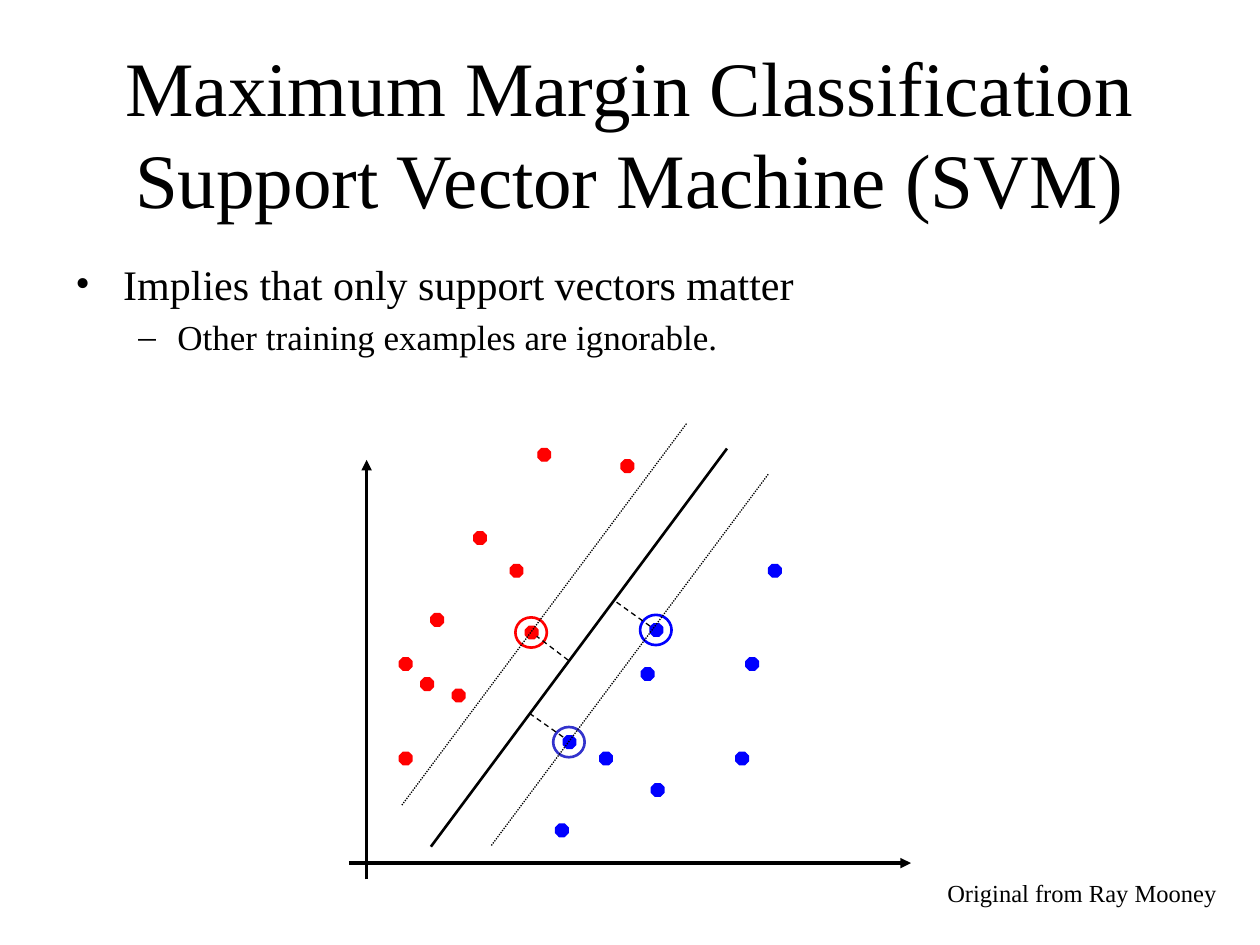
import pptx
import pptx.dml.color
import pptx.enum.dml
import pptx.enum.shapes
import pptx.enum.text
import pptx.oxml.ns
import pptx.util
from lxml import etree
from pptx.util import Inches, Pt

BLACK = pptx.dml.color.RGBColor(0x00, 0x00, 0x00)
RED = pptx.dml.color.RGBColor(0xFF, 0x00, 0x00)
BLUE = pptx.dml.color.RGBColor(0x00, 0x00, 0xFF)
INDIGO = pptx.dml.color.RGBColor(0x33, 0x33, 0xCC)
FONT = "Times New Roman"
DASH = pptx.enum.dml.MSO_LINE.DASH
DOTS = pptx.enum.dml.MSO_LINE.ROUND_DOT
SHAPES = pptx.enum.shapes.MSO_SHAPE
qn = pptx.oxml.ns.qn

POINT_SIZE = 0.1
RING_WIDTH, RING_HEIGHT = 0.25, 0.24

RED_POINTS = [
    (4.05, 4.48), (3.42, 4.87), (3.59, 5.47), (3.17, 5.97), (3.76, 4.22),
    (3.17, 5.22), (3.34, 5.38), (4.17, 4.97), (4.27, 3.56), (4.93, 3.65),
]
BLUE_POINTS = [
    (5.16, 4.95), (4.76, 5.97), (5.84, 5.97), (4.41, 6.54), (5.09, 5.3),
    (4.47, 5.84), (5.17, 6.22), (5.92, 5.22), (6.1, 4.48),
]
SUPPORT_RINGS = [(4.09, 4.9, RED), (4.39, 5.77, INDIGO), (5.08, 4.88, BLUE)]
AXES = [((2.91, 6.98), (2.91, 3.65)), ((2.77, 6.85), (7.23, 6.85))]
SEPARATOR = ((3.42, 6.72), (5.77, 3.56))
MARGIN_DISTANCES = [
    ((5.16, 4.97), (4.88, 4.77)),
    ((4.47, 5.85), (4.2, 5.66)),
    ((4.51, 5.24), (4.26, 5.05)),
]
MARGIN_EDGES = [((3.9, 6.71), (6.1, 3.76)), ((3.19, 6.39), (5.45, 3.36))]


def format_runs(paragraph, size):
    for run in paragraph.runs:
        run.font.name = FONT
        run.font.size = Pt(size)
        run.font.color.rgb = BLACK


def add_text(slide, left, top, width, height, text, size, wrap=True):
    box = slide.shapes.add_textbox(
        Inches(left), Inches(top), Inches(width), Inches(height))
    frame = box.text_frame
    frame.word_wrap = wrap
    frame.text = text
    format_runs(frame.paragraphs[0], size)
    return frame


def set_bullet(paragraph, symbol, margin, hanging):
    properties = paragraph._p.get_or_add_pPr()
    properties.set("marL", str(Inches(margin)))
    properties.set("indent", str(-Inches(hanging)))
    etree.SubElement(properties, qn("a:buFont"), typeface=FONT)
    etree.SubElement(properties, qn("a:buChar"), char=symbol)


def add_title(slide):
    frame = add_text(slide, 0.75, 0.42, 8.5, 1.25,
                     "Maximum Margin Classification\vSupport Vector Machine (SVM)", 44)
    frame.vertical_anchor = pptx.enum.text.MSO_ANCHOR.MIDDLE
    frame.paragraphs[0].alignment = pptx.enum.text.PP_ALIGN.CENTER


def add_body(slide):
    frame = add_text(slide, 0.5, 2, 9, 5.05,
                     "Implies that only support vectors matter", 24)
    set_bullet(frame.paragraphs[0], "•", 0.38, 0.38)
    detail = frame.add_paragraph()
    detail.text = "Other training examples are ignorable."
    detail.level = 1
    set_bullet(detail, "–", 0.81, 0.31)
    detail.space_before = Pt(4)
    format_runs(detail, 20)


def add_line(slide, start, end, width, dash=None, arrow=False):
    line = slide.shapes.add_connector(
        pptx.enum.shapes.MSO_CONNECTOR.STRAIGHT,
        *(Inches(value) for value in start + end))
    line.line.color.rgb = BLACK
    line.line.width = Pt(width)
    if dash is not None:
        line.line.dash_style = dash
    if arrow:
        etree.SubElement(line.line._get_or_add_ln(), qn("a:tailEnd"), type="triangle")
    etree.SubElement(line._element.spPr, qn("a:effectLst"))


def add_mark(slide, preset, left, top, width, height, color, line_width):
    mark = slide.shapes.add_shape(
        preset, Inches(left), Inches(top), Inches(width), Inches(height))
    mark.shadow.inherit = False
    mark.line.color.rgb = color
    mark.line.width = Pt(line_width)
    return mark


def add_point(slide, left, top, color):
    point = add_mark(slide, SHAPES.OCTAGON, left, top,
                     POINT_SIZE, POINT_SIZE, color, 0.75)
    point.fill.solid()
    point.fill.fore_color.rgb = color


def add_ring(slide, left, top, color):
    ring = add_mark(slide, SHAPES.OVAL, left, top,
                    RING_WIDTH, RING_HEIGHT, color, 1.5)
    ring.fill.background()


def add_plot(slide):
    for start, end in AXES:
        add_line(slide, start, end, 2, arrow=True)
    for color, points in ((RED, RED_POINTS), (BLUE, BLUE_POINTS)):
        for left, top in points:
            add_point(slide, left, top, color)
    add_line(slide, *SEPARATOR, 1.5)
    for left, top, color in SUPPORT_RINGS:
        add_ring(slide, left, top, color)
    for dash, lines in ((DASH, MARGIN_DISTANCES), (DOTS, MARGIN_EDGES)):
        for start, end in lines:
            add_line(slide, start, end, 0.75, dash)


def main():
    deck = pptx.Presentation()
    deck.slide_width = Inches(10)
    deck.slide_height = Inches(7.5)
    slide = deck.slides.add_slide(deck.slide_layouts[6])
    add_title(slide)
    add_body(slide)
    add_plot(slide)
    credit = add_text(slide, 7.42, 6.92, 2.36, 0.34,
                      "Original from Ray Mooney", 14, wrap=False)
    credit.auto_size = pptx.enum.text.MSO_AUTO_SIZE.SHAPE_TO_FIT_TEXT
    deck.save("out.pptx")


if __name__ == "__main__":
    main()
